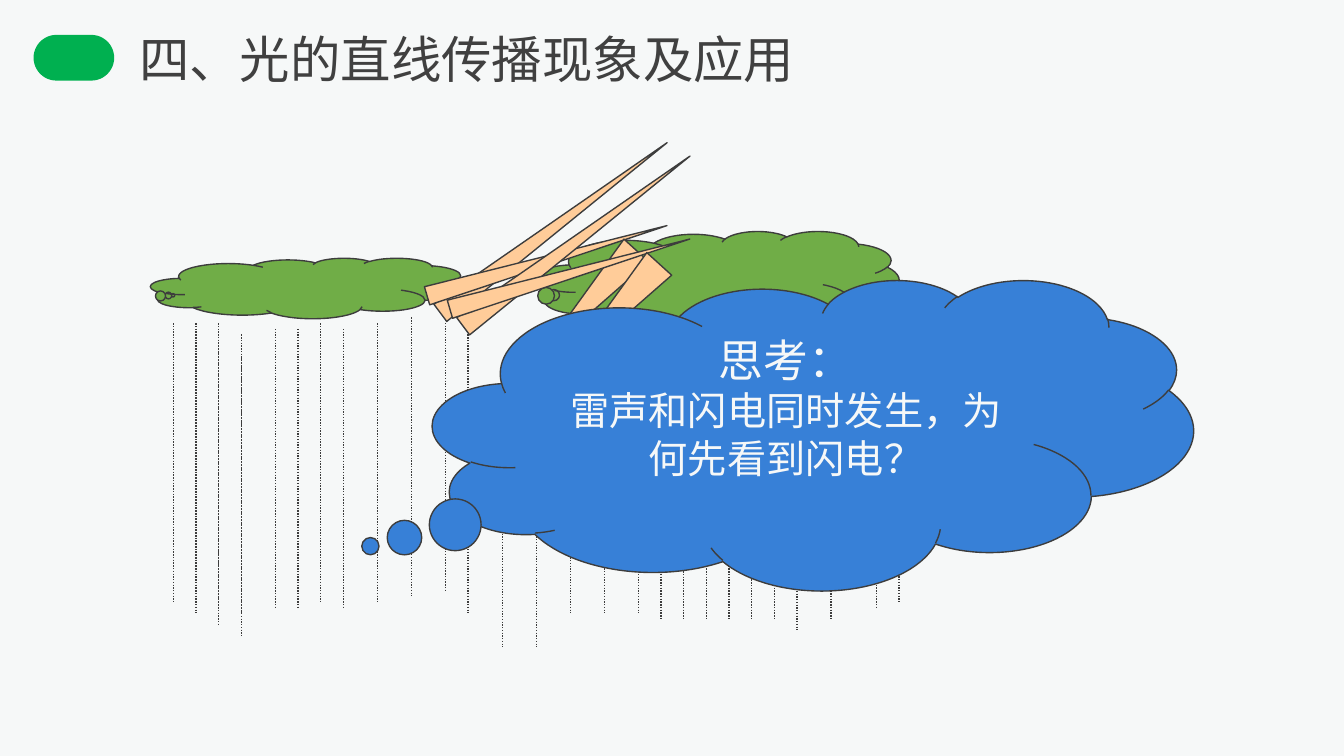
"""Build the slide on light travelling in straight lines: rain clouds, lightning and a question."""
from dataclasses import dataclass

from lxml import etree
from pptx import Presentation
from pptx import util as u
from pptx.dml.color import RGBColor
from pptx.enum import dml, shapes, text
from pptx.oxml.ns import qn


@dataclass(frozen=True)
class Theme:
    page: str = "F6F8F8"
    accent: str = "00B050"
    rain_cloud: str = "70AD47"
    lightning: str = "FFCC99"
    thought: str = "3780D7"
    outline: str = "3D3D3D"
    heading: str = "404040"
    font: str = "Arial"
    heading_size: int = 27
    prompt_size: int = 24
    question_size: int = 21
    line_width: float = 0.75


class Scene:
    """Hold the theme and the current page, laid out on a grid of tenth-inch cells."""

    CELL = u.Inches(0.1)

    def __init__(self, deck, theme):
        self.theme = theme
        self.page = deck.slides.add_slide(deck.slide_layouts[5])
        self.paint(self.page.background, theme.page)

    def paint(self, target, color):
        target.fill.solid()
        target.fill.fore_color.rgb = RGBColor.from_string(color)

    def cells(self, *lengths):
        return [u.Emu(round(length * self.CELL)) for length in lengths]

    def outline(self, line):
        line.color.rgb = RGBColor.from_string(self.theme.outline)
        line.width = u.Pt(self.theme.line_width)

    def style(self, para, size, color):
        para.font.name = self.theme.font
        para.font.size = u.Pt(size)
        para.font.color.rgb = RGBColor.from_string(color)

    def title(self, words, area):
        box = self.page.shapes.title
        box.left, box.top, box.width, box.height = self.cells(*area)
        frame = box.text_frame
        frame.text = words
        frame.word_wrap = True
        frame.auto_size = text.MSO_AUTO_SIZE.NONE
        frame.vertical_anchor = text.MSO_ANCHOR.TOP
        frame.margin_left = frame.margin_right = u.Inches(0.07)
        frame.margin_top = frame.margin_bottom = u.Inches(0.04)
        para = frame.paragraphs[0]
        para.alignment = text.PP_ALIGN.LEFT
        self.style(para, self.theme.heading_size, self.theme.heading)

    def shape(self, kind, area, color, outlined=True):
        box = self.page.shapes.add_shape(kind, *self.cells(*area))
        box.shadow.inherit = False
        self.paint(box, color)
        if outlined:
            self.outline(box.line)
        else:
            box.line.fill.background()
        return box

    def pill(self, area):
        box = self.shape(shapes.MSO_SHAPE.ROUNDED_RECTANGLE, area, self.theme.accent, False)
        box.adjustments[0] = 0.5

    def cloud(self, area, tail, color):
        box = self.shape(shapes.MSO_SHAPE.CLOUD_CALLOUT, area, color)
        box.adjustments[0], box.adjustments[1] = tail
        return box

    def bolt(self, area, angle):
        box = self.shape(shapes.MSO_SHAPE.ISOSCELES_TRIANGLE, area, self.theme.lightning)
        box.rotation = angle

    def raindrop(self, x, top, length):
        ends = self.cells(x, top, x, top + length)
        line = self.page.shapes.add_connector(shapes.MSO_CONNECTOR.STRAIGHT, *ends)
        self.outline(line.line)
        line.line.dash_style = dml.MSO_LINE.ROUND_DOT
        etree.SubElement(line._element.spPr, qn("a:effectLst"))

    def thought(self, area, tail, prompt, question):
        frame = self.cloud(area, tail, self.theme.thought).text_frame
        frame.word_wrap = True
        frame.vertical_anchor = text.MSO_ANCHOR.TOP
        frame.margin_left = frame.margin_right = u.Inches(0.15)
        frame.text = f"{prompt}\n{question}"
        sizes = (self.theme.prompt_size, self.theme.question_size)
        for para, size in zip(frame.paragraphs, sizes):
            para.alignment = text.PP_ALIGN.CENTER
            self.style(para, size, self.theme.page)


RAIN_LEFT, RAIN_TOP, RAIN_LENGTH = 12.9, 23.2, 20.7
RAIN_COLUMN = 54 / 64
RAIN_ROW = RAIN_COLUMN / 2
RAIN_COLUMNS_BY_ROW = {
    0: [24],
    1: [21],
    2: [0, 2, 4, 13, 18, 64],
    3: [9, 11, 15, 62],
    4: [2, 6, 26, 35, 38, 41],
    5: [43, 45, 47, 49, 51, 53, 58],
    6: [4],
    7: [55],
    8: [6],
    10: [29, 32],
}
BOLTS = [
    ((40.4, 6.4, 1.6, 21.1), 53.1),
    ((40, 10.1, 1.4, 18.6), 73.7),
    ((42.4, 17.2, 2.5, 11), 222.3),
]
BOLT_OFFSETS = [(0, 0), (1.7, 1)]


def main():
    deck = Presentation()
    deck.slide_width = u.Inches(10)
    deck.slide_height = u.Emu(deck.slide_width * 9 // 16)
    theme = Theme()
    scene = Scene(deck, theme)

    scene.pill((2.5, 2.6, 6, 3.4))
    scene.title("四、光的直线传播现象及应用", (9.65, 1.7, 50.5, 5.3))
    scene.cloud((39.9, 17.2, 27, 7.5), (-0.445, 0.133), theme.rain_cloud)
    scene.cloud((11.2, 19.2, 23.6, 4.5), (-0.429, 0.116), theme.rain_cloud)

    for row, columns in RAIN_COLUMNS_BY_ROW.items():
        for column in columns:
            scene.raindrop(RAIN_LEFT + column * RAIN_COLUMN, RAIN_TOP + row * RAIN_ROW, RAIN_LENGTH)

    for dx, dy in BOLT_OFFSETS:
        for (left, top, width, height), angle in BOLTS:
            scene.bolt((left + dx, top + dy, width, height), angle)

    scene.thought((32.2, 20.8, 56.6, 23.1), (-0.582, 0.359),
                  "思考：", "雷声和闪电同时发生，为何先看到闪电？")
    deck.save("out.pptx")


if __name__ == "__main__":
    main()
